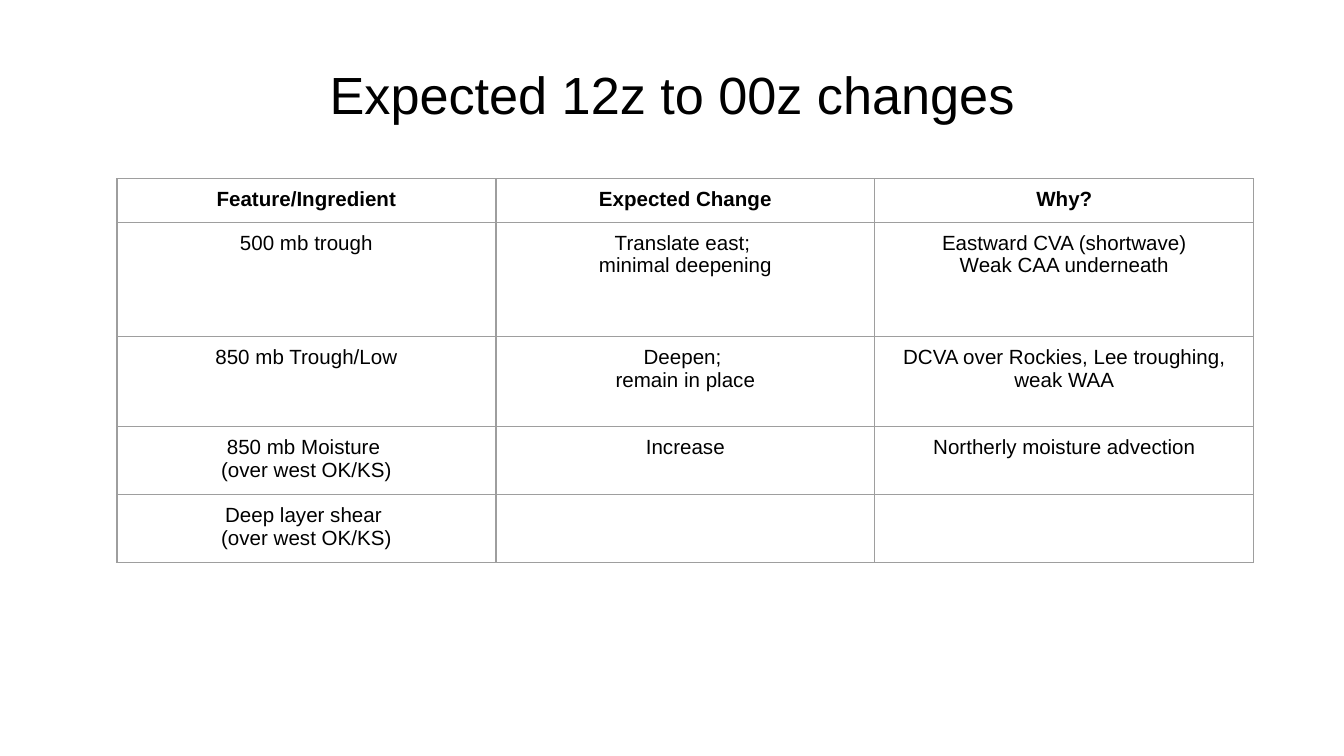
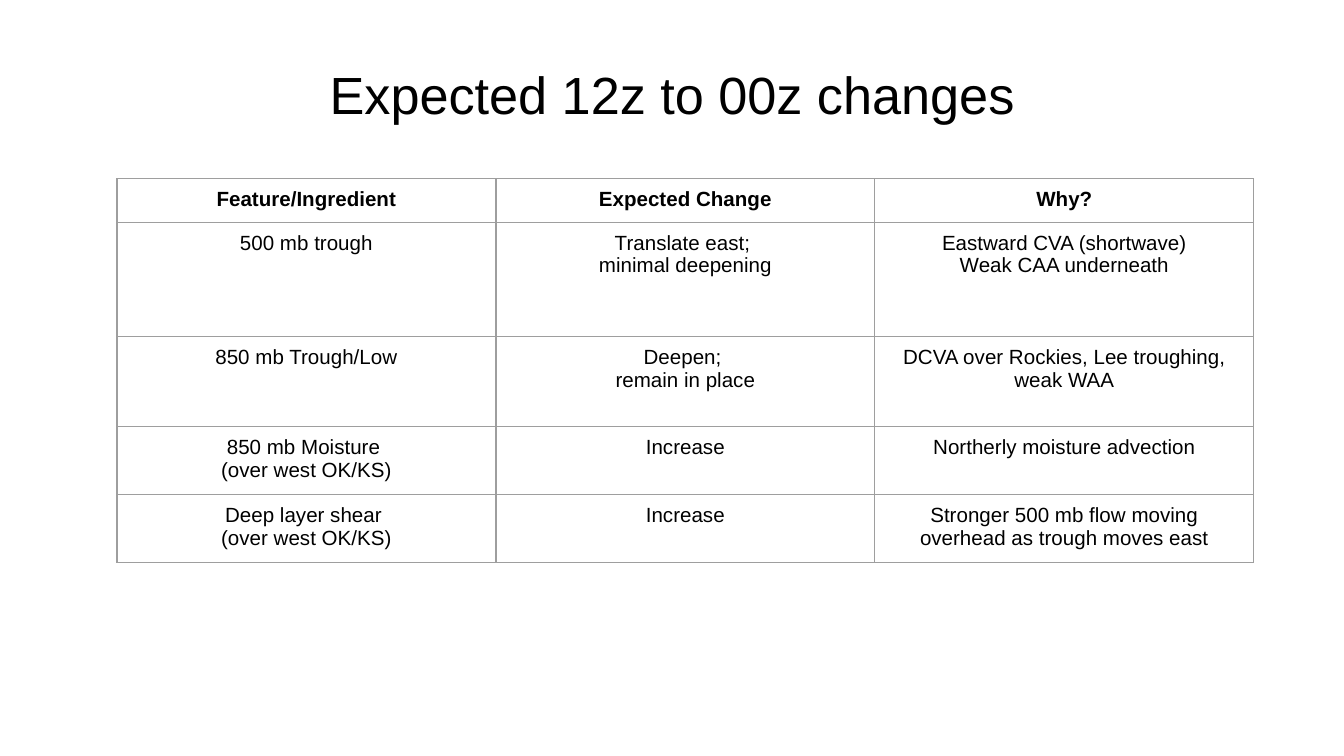
from dataclasses import dataclass

from lxml.etree import SubElement
from pptx import Presentation
from pptx.dml.color import RGBColor
from pptx.enum.text import MSO_ANCHOR, PP_ALIGN
from pptx.oxml.ns import qn
from pptx.util import Inches, Pt


@dataclass(frozen=True)
class Theme:
    font: str = "Arial"
    ink: str = "000000"
    paper: str = "FFFFFF"
    rule: str = "9E9E9E"
    rule_width: float = 0.75
    title_size: int = 28
    cell_size: int = 11
    cell_inset: float = 0.07


class Deck:
    COLUMNS = 100

    def __init__(self, theme):
        self.theme = theme
        self.prs = Presentation()
        self.prs.slide_width = Inches(10)
        self.prs.slide_height = Inches(5.625)
        self.unit = self.prs.slide_width / self.COLUMNS
        self.s = None

    def grid(self, *cells):
        return [round(n * self.unit) for n in cells]

    def slide(self):
        self.s = self.prs.slides.add_slide(self.prs.slide_layouts[6])
        fill = self.s.background.fill
        fill.solid()
        fill.fore_color.rgb = RGBColor.from_string(self.theme.paper)

    def add_lines(self, tf, lines, size, bold=False):
        for i, line in enumerate(lines):
            p = tf.add_paragraph() if i else tf.paragraphs[0]
            p.alignment = PP_ALIGN.CENTER
            r = p.add_run()
            r.text = line
            r.font.name = self.theme.font
            r.font.size = Pt(size)
            r.font.bold = bold
            r.font.color.rgb = RGBColor.from_string(self.theme.ink)

    def title(self, text):
        sp = self.s.shapes.add_textbox(*self.grid(5, 2.3, 90, 9.4))
        tf = sp.text_frame
        tf.word_wrap = True
        tf.vertical_anchor = MSO_ANCHOR.MIDDLE
        self.add_lines(tf, [text], self.theme.title_size)

    def borders(self, cell):
        tcPr = cell._tc.get_or_add_tcPr()
        for side in ("lnL", "lnR", "lnT", "lnB"):
            ln = SubElement(tcPr, qn(f"a:{side}"), w=str(Pt(self.theme.rule_width)))
            fill = SubElement(ln, qn("a:solidFill"))
            SubElement(fill, qn("a:srgbClr"), val=self.theme.rule)

    def table(self, left, top, column_width, row_heights, rows):
        count = len(rows[0])
        box = self.grid(left, top, column_width * count, sum(row_heights))
        table = self.s.shapes.add_table(len(rows), count, *box).table
        table.first_row = table.horz_banding = False
        for column in table.columns:
            column.width = self.grid(column_width)[0]
        for row, height in zip(table.rows, self.grid(*row_heights)):
            row.height = height
        for y, row in enumerate(rows):
            for x, lines in enumerate(row):
                cell = table.cell(y, x)
                cell.margin_top = cell.margin_bottom = Inches(self.theme.cell_inset)
                self.borders(cell)
                cell.fill.background()
                self.add_lines(cell.text_frame, lines, self.theme.cell_size, bold=y == 0)


TITLE = "Expected 12z to 00z changes"
ROW_HEIGHTS = [3.2, 8.5, 6.7, 5, 5]
PLACE = "(over west OK/KS)"
KNOWN = [
    [["Feature/Ingredient"], ["Expected Change"], ["Why?"]],
    [
        ["500 mb trough"],
        ["Translate east; ", "minimal deepening"],
        ["Eastward CVA (shortwave)", "Weak CAA underneath"],
    ],
    [
        ["850 mb Trough/Low"],
        ["Deepen; ", "remain in place"],
        ["DCVA over Rockies, Lee troughing, weak WAA"],
    ],
    [["850 mb Moisture ", PLACE], ["Increase"], ["Northerly moisture advection"]],
]
SHEAR = ["Deep layer shear ", PLACE]
SHEAR_ANSWERS = [
    [[], []],
    [["Increase"], ["Stronger 500 mb flow moving overhead as trough moves east"]],
]


def main():
    deck = Deck(Theme())
    for answers in SHEAR_ANSWERS:
        deck.slide()
        deck.title(TITLE)
        deck.table(8.7, 13.3, 28.2, ROW_HEIGHTS, KNOWN + [[SHEAR, *answers]])
    deck.prs.save("out.pptx")


if __name__ == "__main__":
    main()
